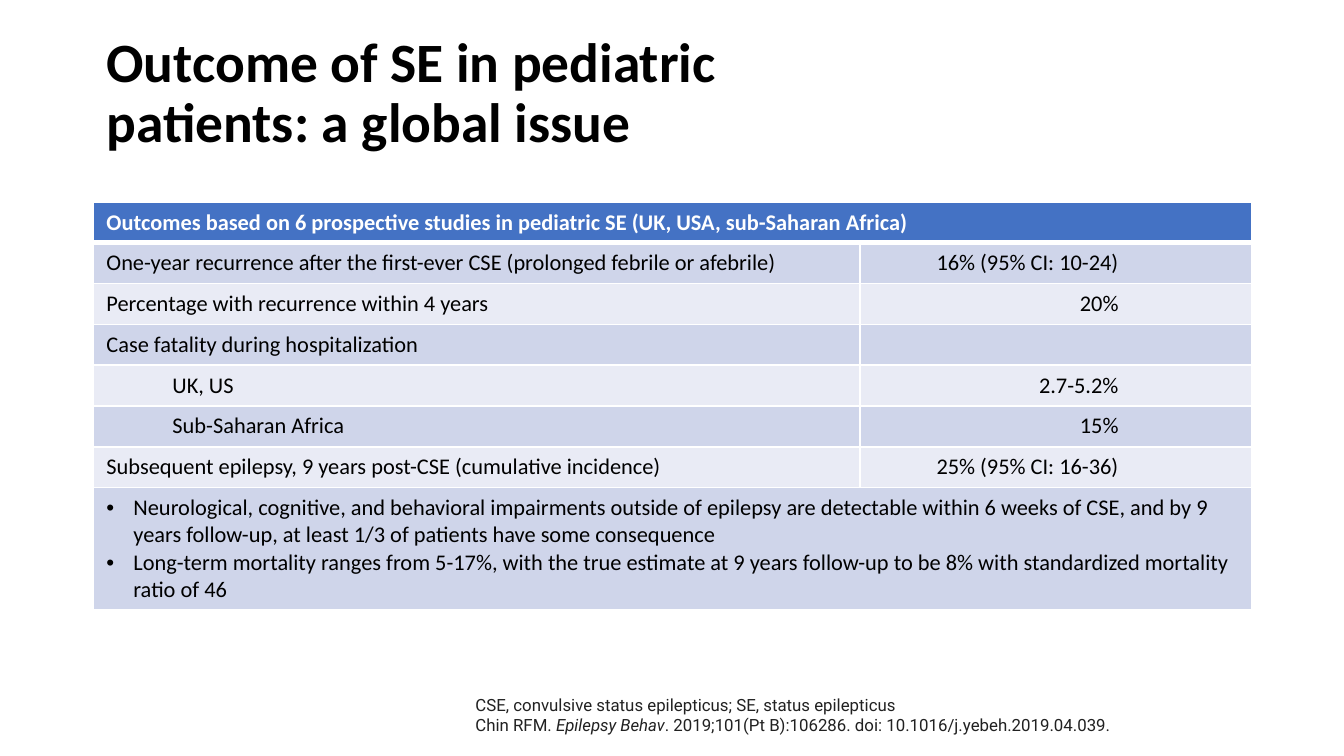
from dataclasses import dataclass

from lxml import etree
from pptx import Presentation
from pptx.dml.color import RGBColor
from pptx.enum.text import MSO_ANCHOR, MSO_AUTO_SIZE, PP_ALIGN
from pptx.oxml.ns import qn
from pptx.util import Emu, Pt

LEFT, RIGHT = PP_ALIGN.LEFT, PP_ALIGN.RIGHT
MIDDLE, BOTTOM = MSO_ANCHOR.MIDDLE, MSO_ANCHOR.BOTTOM
NO_FIT = MSO_AUTO_SIZE.NONE
EMU_PER_PX = 914400 / 134.4


@dataclass(frozen=True)
class Theme:
    font: str = "Calibri"
    note_font: str = "Roboto"
    title_size: float = 29.7
    table_size: float = 12
    note_size: float = 9
    text: str = "000000"
    note: str = "212121"
    white: str = "FFFFFF"
    header: str = "4472C4"
    bands: tuple = ("CFD5EA", "E9EBF5")


def px(n):
    return Emu(round(n * EMU_PER_PX))


class Deck:
    def __init__(self, theme, width, height):
        self.theme = theme
        self.prs = Presentation()
        self.prs.slide_width, self.prs.slide_height = px(width), px(height)

    def add_slide(self):
        self.slide = self.prs.slides.add_slide(self.prs.slide_layouts[1])

    def style(self, p, font, size, color, bold=False):
        for r in p.runs:
            r.font.name, r.font.size, r.font.bold = font, Pt(size), bold
            r.font.color.rgb = RGBColor.from_string(color)

    def indent(self, p, margin, first, bullet=None):
        pPr = p._p.get_or_add_pPr()
        pPr.set("marL", str(px(margin)))
        pPr.set("indent", str(px(first)))
        if bullet:
            etree.SubElement(pPr, qn("a:buFont"), typeface="Arial")
            etree.SubElement(pPr, qn("a:buChar"), char=bullet)
        else:
            etree.SubElement(pPr, qn("a:buNone"))

    def place(self, sp, box, anchor):
        sp.left, sp.top, sp.width, sp.height = map(px, box)
        tf = sp.text_frame
        tf.word_wrap, tf.auto_size, tf.vertical_anchor = True, NO_FIT, anchor
        return tf

    def title(self, text, box):
        tf = self.place(self.slide.shapes.title, box, MIDDLE)
        tf.margin_right = px(26)
        tf.text = text
        p = tf.paragraphs[0]
        p.alignment, p.line_spacing = LEFT, 0.9
        self.style(p, self.theme.font, self.theme.title_size,
                   self.theme.text, bold=True)

    def notes(self, lines, box):
        """Each line is a list of (text, italic) pairs."""
        tf = self.place(self.slide.placeholders[1], box, BOTTOM)
        for i, line in enumerate(lines):
            p = tf.add_paragraph() if i else tf.paragraphs[0]
            self.indent(p, 0, 0)
            p.space_before = Pt(0)
            for text, italic in line:
                r = p.add_run()
                r.text, r.font.italic = text, italic
            self.style(p, self.theme.note_font, self.theme.note_size,
                       self.theme.note)

    def table(self, left, top, widths, heights):
        shape = self.slide.shapes.add_table(
            len(heights), len(widths), px(left), px(top),
            px(sum(widths)), px(sum(heights)))
        table = shape.table
        for col, width in zip(table.columns, widths):
            col.width = px(width)
        for row, height in zip(table.rows, heights):
            row.height = px(height)
        return table

    def border(self, cell, side, width):
        ln = etree.SubElement(cell._tc.get_or_add_tcPr(), qn(f"a:ln{side}"),
                              w=str(Pt(width)))
        if width:
            fill = etree.SubElement(ln, qn("a:solidFill"))
            etree.SubElement(fill, qn("a:srgbClr"), val=self.theme.white)
        else:
            etree.SubElement(ln, qn("a:noFill"))

    def cell(self, cell, text, fill, borders, header=False, align=LEFT,
             margin=0, first=0, bullet=None):
        for side, width in zip("LRTB", borders):
            self.border(cell, side, width)
        cell.fill.solid()
        cell.fill.fore_color.rgb = RGBColor.from_string(fill)
        cell.text_frame.text = text
        for p in cell.text_frame.paragraphs:
            self.indent(p, margin, first, bullet)
            p.alignment = align
            self.style(p, self.theme.font, self.theme.table_size,
                       self.theme.white if header else self.theme.text, header)
            if not text:  # keeps an empty cell from stretching its row
                etree.SubElement(p._p, qn("a:endParaRPr"),
                                 sz=str(round(self.theme.table_size * 100)))


HEADING = ("Outcomes based on 6 prospective studies in pediatric SE "
           "(UK, USA, sub-Saharan Africa)")
# label, value, first-line indent
OUTCOMES = [
    ("One-year recurrence after the first-ever CSE "
     "(prolonged febrile or afebrile)", "16% (95% CI: 10-24)", 0),
    ("Percentage with recurrence within 4 years", "20%", 0),
    ("Case fatality during hospitalization", "", 0),
    ("UK, US", "2.7-5.2%", 66),
    ("Sub-Saharan Africa", "15%", 66),
    ("Subsequent epilepsy, 9 years post-CSE (cumulative incidence)",
     "25% (95% CI: 16-36)", 0),
]
FINDINGS = [
    "Neurological, cognitive, and behavioral impairments outside of epilepsy "
    "are detectable within 6 weeks of CSE, and by 9 years follow-up, "
    "at least 1/3 of patients have some consequence",
    "Long-term mortality ranges from 5-17%, with the true estimate at 9 years "
    "follow-up to be 8% with standardized mortality ratio of 46",
]
NOTES = [
    [("CSE, convulsive status epilepticus; SE, status epilepticus", False)],
    [("Chin RFM. ", False), ("Epilepsy Behav", True),
     (". 2019;101(Pt B):106286. doi: 10.1016/j.yebeh.2019.04.039.", False)],
]


def main():
    theme = Theme()
    deck = Deck(theme, 1344, 756)
    deck.add_slide()

    # Title
    deck.title("Outcome of SE in pediatric patients: a global issue",
               (93, 40, 853, 109))

    # Outcomes table: header, banded rows, findings
    rows = len(OUTCOMES) + 2
    table = deck.table(93, 202, (767, 272, 120), [40] * (rows - 1) + [122])
    for row in (0, rows - 1):
        table.cell(row, 0).merge(table.cell(row, 2))
    deck.cell(table.cell(0, 0), HEADING, theme.header, (1, 1, 1, 3),
              header=True)
    for i, (label, value, first) in enumerate(OUTCOMES):
        fill, top = theme.bands[i % 2], 1 if i else 3
        label_cell, value_cell, spare_cell = table.rows[i + 1].cells
        deck.cell(label_cell, label, fill, (1, 1, top, 1), first=first)
        deck.cell(value_cell, value, fill, (1, 0, top, 1), align=RIGHT)
        deck.cell(spare_cell, "", fill, (0, 1, top, 1))
    deck.cell(table.cell(rows - 1, 0), "\n".join(FINDINGS), theme.bands[0],
              (1, 1, 1, 1), margin=27, first=-27, bullet="•")

    # Abbreviations and reference
    deck.notes(NOTES, (462, 679, 790, 63))

    deck.prs.save("out.pptx")


if __name__ == "__main__":
    main()
